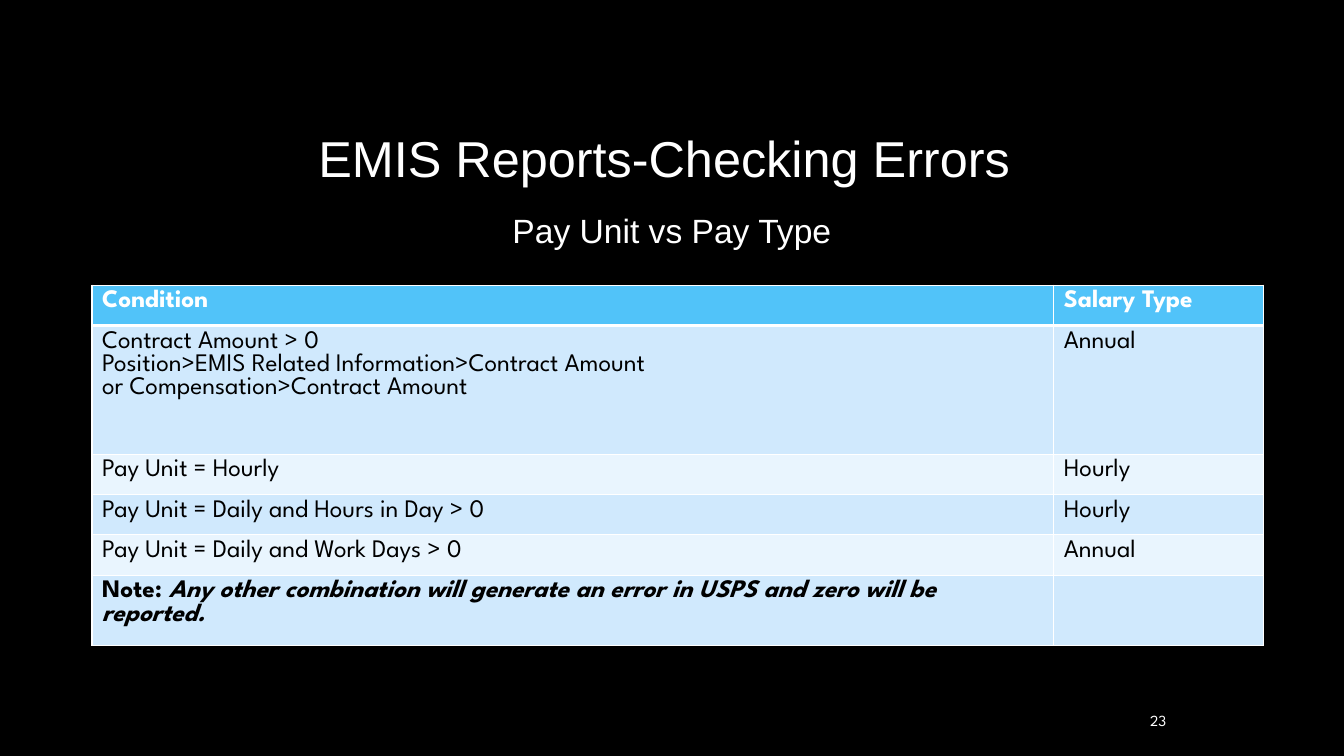
"""Build the slide on pay unit and pay type checks in EMIS reports."""
from dataclasses import dataclass

from lxml import etree
from pptx import Presentation
from pptx import util as u
from pptx.dml import color
from pptx.enum import text
from pptx.oxml import ns

HEADINGS = [
    ("EMIS Reports-Checking Errors ", (119.5, 30.25, 720, 108), "title"),
    ("Pay Unit vs Pay Type", (77.75, 149.75, 804.25, 354.25), "subtitle"),
    ("23", (774, 504, 66.25, 21.6), "number"),
]
NOTE = [
    ("Note: ", False),
    ("Any other combination will generate an error in USPS and zero will be reported.", True),
]
ROWS = [
    ("Condition", "Salary Type"),
    ("Contract Amount > 0\n"
     "Position>EMIS Related Information>Contract Amount\n"
     "or Compensation>Contract Amount", "Annual"),
    ("Pay Unit = Hourly", "Hourly"),
    ("Pay Unit = Daily and Hours in Day > 0", "Hourly"),
    ("Pay Unit = Daily and Work Days > 0", "Annual"),
    (NOTE, ""),
]
TABLE_LEFT, TABLE_TOP = 65.75, 203.75
COLUMN_WIDTHS = (687, 150)
ROW_HEIGHTS = (28.4, 91.8, 28.4, 28.4, 28.4, 40.3)


@dataclass(frozen=True)
class Theme:
    """Colours, fonts and type styles."""
    background = "000000"
    light = "FFFFFF"
    dark = "000000"
    header = "51C3F9"
    bands = ("E9F5FE", "D0E9FD")
    table_font = "League Spartan"
    table_size = 18
    styles = {
        "title": ("Arial", 36, text.PP_ALIGN.CENTER, text.MSO_ANCHOR.BOTTOM, 0.9),
        "subtitle": ("Arial", 24, text.PP_ALIGN.CENTER, text.MSO_ANCHOR.TOP, 0.9),
        "number": ("League Spartan", 11, text.PP_ALIGN.RIGHT, text.MSO_ANCHOR.MIDDLE, 1.0),
    }


theme = Theme()


def set_font(font, name, size, ink, bold=False, italic=False):
    """Apply a type style."""
    font.name, font.size, font.bold, font.italic = name, u.Pt(size), bold, italic
    font.color.rgb = color.RGBColor.from_string(ink)


def add_heading(page, words, place, style):
    """Add one line of text outside the table."""
    name, size, align, anchor, spacing = theme.styles[style]
    frame = page.shapes.add_textbox(*map(u.Pt, place)).text_frame
    frame.word_wrap = True
    frame.vertical_anchor = anchor
    para = frame.paragraphs[0]
    para.text, para.alignment, para.line_spacing = words, align, spacing
    set_font(para.runs[0].font, name, size, theme.light)


def set_border(cell, side, width):
    """Draw one side of a cell."""
    line = etree.SubElement(cell._tc.get_or_add_tcPr(), ns.qn(f"a:ln{side}"), w=str(u.Pt(width)))
    fill = etree.SubElement(line, ns.qn("a:solidFill"))
    etree.SubElement(fill, ns.qn("a:srgbClr"), val=theme.light)


def fill_cell(cell, content, row):
    """Write and style one cell."""
    header = row == 0
    for side in "LRTB":
        heavy = (row, side) in ((0, "B"), (1, "T"))
        set_border(cell, side, 3 if heavy else 1)
    cell.fill.solid()
    shade = theme.header if header else theme.bands[row % 2]
    cell.fill.fore_color.rgb = color.RGBColor.from_string(shade)
    frame = cell.text_frame
    if isinstance(content, str):
        frame.text = content
        ink = theme.light if header else theme.dark
        for para in frame.paragraphs:
            set_font(para.font, theme.table_font, theme.table_size, ink, header)
            for span in para.runs:
                set_font(span.font, theme.table_font, theme.table_size, ink, header)
    else:
        for words, italic in content:
            span = frame.paragraphs[0].add_run()
            span.text = words
            set_font(span.font, theme.table_font, theme.table_size, theme.dark, True, italic)


def add_pay_table(page):
    """Add the table of conditions and salary types."""
    place = (TABLE_LEFT, TABLE_TOP, sum(COLUMN_WIDTHS), sum(ROW_HEIGHTS))
    table = page.shapes.add_table(len(ROWS), len(COLUMN_WIDTHS), *map(u.Pt, place)).table
    for column, width in zip(table.columns, COLUMN_WIDTHS):
        column.width = u.Pt(width)
    for row, (contents, height) in enumerate(zip(ROWS, ROW_HEIGHTS)):
        table.rows[row].height = u.Pt(height)
        for column, content in enumerate(contents):
            fill_cell(table.cell(row, column), content, row)


def main():
    """Build and save the deck."""
    deck = Presentation()
    deck.slide_width, deck.slide_height = u.Pt(960), u.Pt(540)
    page = deck.slides.add_slide(deck.slide_layouts[6])
    page.background.fill.solid()
    page.background.fill.fore_color.rgb = color.RGBColor.from_string(theme.background)
    for heading in HEADINGS:
        add_heading(page, *heading)
    add_pay_table(page)
    deck.save("out.pptx")


if __name__ == "__main__":
    main()
